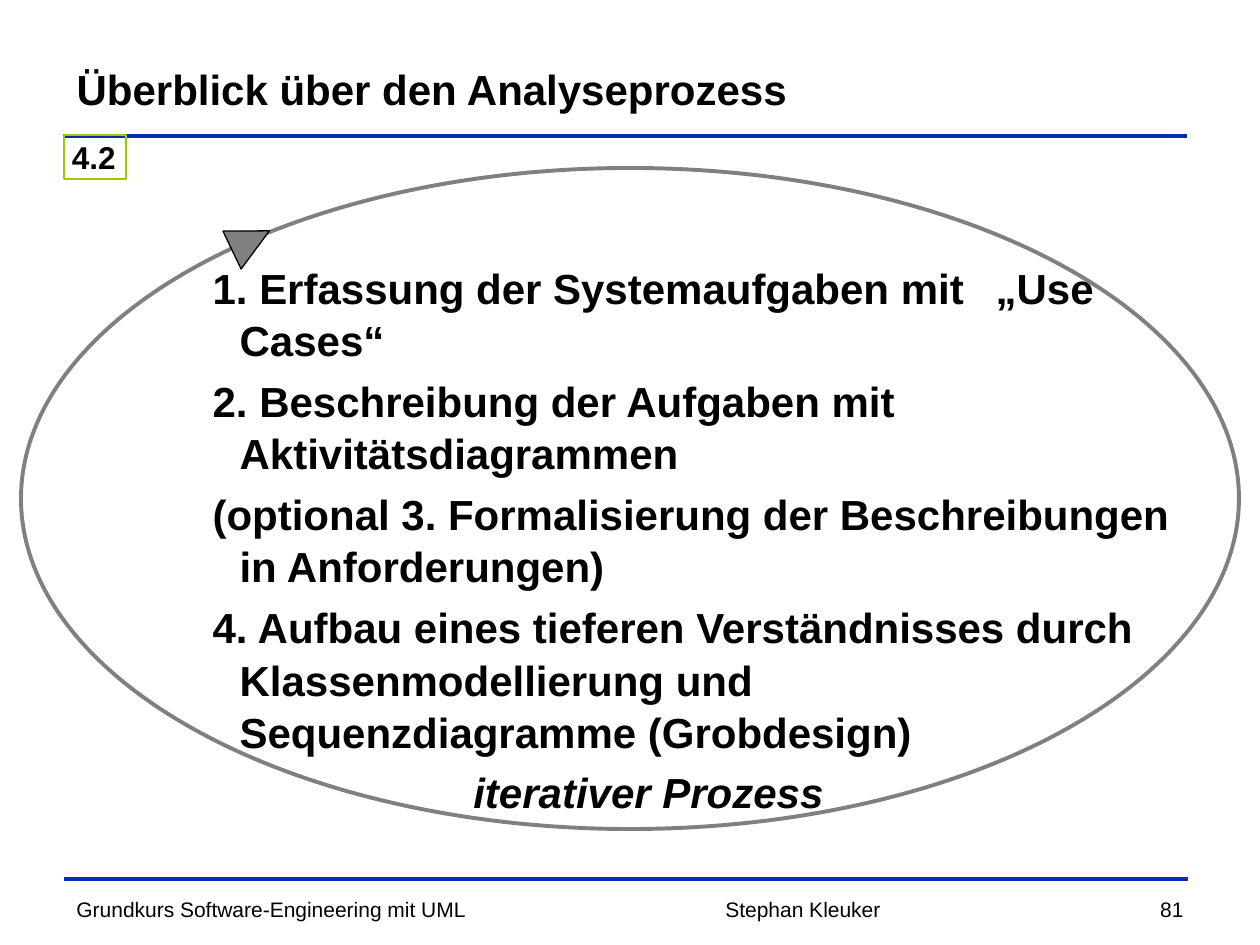
"""Builds the slide that gives an overview of the iterative analysis process."""
from lxml.etree import SubElement
from pptx import Presentation
from pptx.dml.color import RGBColor
from pptx.enum.shapes import MSO_CONNECTOR as Connector, MSO_SHAPE as Shape
from pptx.enum.text import MSO_ANCHOR as Anchor, MSO_AUTO_SIZE as AutoSize, PP_ALIGN as Align
from pptx.oxml.ns import qn
from pptx.util import Emu, Pt

PX_PER_INCH = 126
SLIDE_SIZE = (1260, 945)
BLACK, BLUE, GRAY, GREEN = "000000", "042EAE", "808080", "99CC00"

TITLE = "Überblick über den Analyseprozess"
STEPS = [
    "1. Erfassung der Systemaufgaben mit \t„Use Cases“",
    "2. Beschreibung der Aufgaben mit Aktivitätsdiagrammen",
    "(optional 3. Formalisierung der Beschreibungen in Anforderungen)",
    "4. Aufbau eines tieferen Verständnisses durch Klassenmodellierung und \tSequenzdiagramme (Grobdesign)",
]
FOOTERS = [
    ("Grundkurs Software-Engineering mit UML", 64, 436, Align.LEFT),
    ("81", 898, 298, Align.RIGHT),
    ("Stephan Kleuker", 679, 248, Align.CENTER),
]
FOOTER_TOP, FOOTER_HEIGHT = 890, 36
RULES = [(63, 1187, 136), (64, 1188, 879)]

TITLE_BOX = (64, 35, 1122, 107)
STEPS_BOX = (200, 254, 1004, 619)
CYCLE_BOX = (21, 168, 1218, 661)
ARROW_BOX = (230, 220, 42, 42)
CAPTION_BOX = (461, 760, 376, 63)
CHAPTER_BOX = (64, 135, 62, 44)
HANGING = 27


def px(value):
    return Emu(round(value * 914400 / PX_PER_INCH))


def rgb(color):
    return RGBColor.from_string(color)


def set_all(target, values):
    for name, value in values.items():
        setattr(target, name, value)


def place(shape, box):
    set_all(shape, dict(zip(("left", "top", "width", "height"), map(px, box))))


def write(shape, lines, size, align=Align.LEFT, frame_format=None, **font_format):
    frame = shape.text_frame
    set_all(frame, {"word_wrap": True, "auto_size": AutoSize.NONE, **(frame_format or {})})
    frame.text = "\n".join(lines)
    for para in frame.paragraphs:
        para.alignment = align
        for span in para.runs:
            set_all(span.font, {"name": "Arial", "size": Pt(size), **font_format})
            span.font.color.rgb = rgb(BLACK)
    return frame


def add_rule(slide, left, right, y):
    rule = slide.shapes.add_connector(Connector.STRAIGHT, px(left), px(y), px(right), px(y))
    set_all(rule.line, {"width": Pt(2)})
    rule.line.color.rgb = rgb(BLUE)
    SubElement(rule.element.spPr, qn("a:effectLst"))


def add_outline(slide, kind, box, color, width, fill=None):
    shape = slide.shapes.add_shape(kind, *map(px, box))
    shape.shadow.inherit = False
    shape.line.color.rgb = rgb(color)
    shape.line.width = Pt(width)
    if fill:
        shape.fill.solid()
        shape.fill.fore_color.rgb = rgb(fill)
    else:
        shape.fill.background()
    return shape


def add_steps(body):
    place(body, STEPS_BOX)
    frame = write(body, STEPS, 24, bold=True)
    for para in frame.paragraphs:
        set_all(para, {"space_before": Pt(4.8), "line_spacing": 1.04})
        props = para._p.get_or_add_pPr()
        props.set("marL", str(px(HANGING)))
        props.set("indent", str(-px(HANGING)))
        SubElement(props, qn("a:buNone"))


def main():
    deck = Presentation()
    deck.slide_width, deck.slide_height = map(px, SLIDE_SIZE)
    slide = deck.slides.add_slide(deck.slide_layouts[1])
    title, body = slide.placeholders

    for rule in RULES:
        add_rule(slide, *rule)
    for text, left, width, align in FOOTERS:
        box = slide.shapes.add_textbox(*map(px, (left, FOOTER_TOP, width, FOOTER_HEIGHT)))
        write(box, [text], 12, align)

    place(title, TITLE_BOX)
    write(title, [TITLE], 24, frame_format={"vertical_anchor": Anchor.MIDDLE}, bold=True)
    add_steps(body)

    add_outline(slide, Shape.OVAL, CYCLE_BOX, GRAY, 2.25)
    arrow = add_outline(slide, Shape.ISOSCELES_TRIANGLE, ARROW_BOX, BLACK, 0.75, GRAY)
    arrow.rotation = 64.5
    arrow.adjustments[0] = 0.47

    growing = {"word_wrap": False, "auto_size": AutoSize.SHAPE_TO_FIT_TEXT}
    caption = slide.shapes.add_textbox(*map(px, CAPTION_BOX))
    write(caption, ["iterativer Prozess"], 24, frame_format=growing, bold=True, italic=True)

    chapter = add_outline(slide, Shape.RECTANGLE, CHAPTER_BOX, GREEN, 1.5)
    margins = {"margin_left": px(8), "margin_right": px(8), "margin_top": px(1), "margin_bottom": px(1)}
    write(chapter, ["4.2"], 18, frame_format={**growing, **margins}, bold=True)

    deck.save("out.pptx")


if __name__ == "__main__":
    main()
